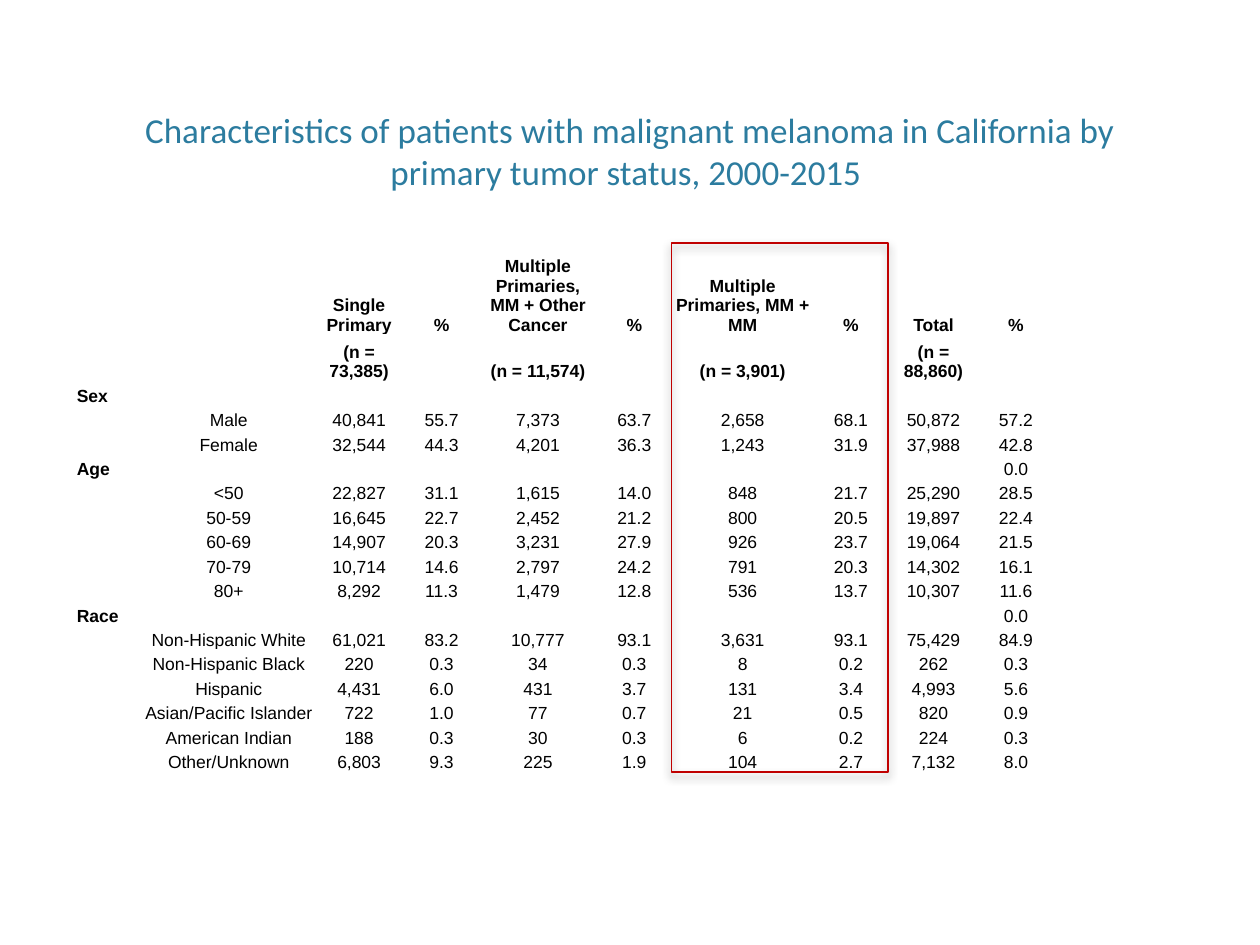
from dataclasses import dataclass
from lxml.etree import SubElement
from pptx import Presentation
from pptx.dml.color import RGBColor
from pptx.enum.shapes import MSO_SHAPE
from pptx.enum.text import MSO_ANCHOR, PP_ALIGN
from pptx.oxml.ns import qn
from pptx.util import Inches, Pt

TITLE = ("Characteristics of patients with malignant melanoma in California by "
         "primary tumor status, 2000-2015 ")
HEADERS = [
    ("", "", "Single Primary", "%", "Multiple Primaries, MM + Other Cancer", "%",
     "Multiple Primaries, MM + MM", "%", "Total", "%"),
    ("", "", "(n = 73,385)", "", "(n = 11,574)", "", "(n = 3,901)", "", "(n = 88,860)", ""),
]
# Group name, whether it spans two columns, its last cell, and its patient rows
GROUPS = [
    ("Sex", True, "", [
        ("Male", "40,841", "55.7", "7,373", "63.7", "2,658", "68.1", "50,872", "57.2"),
        ("Female", "32,544", "44.3", "4,201", "36.3", "1,243", "31.9", "37,988", "42.8"),
    ]),
    ("Age", False, "0.0", [
        ("<50", "22,827", "31.1", "1,615", "14.0", "848", "21.7", "25,290", "28.5"),
        ("50-59", "16,645", "22.7", "2,452", "21.2", "800", "20.5", "19,897", "22.4"),
        ("60-69", "14,907", "20.3", "3,231", "27.9", "926", "23.7", "19,064", "21.5"),
        ("70-79", "10,714", "14.6", "2,797", "24.2", "791", "20.3", "14,302", "16.1"),
        ("80+", "8,292", "11.3", "1,479", "12.8", "536", "13.7", "10,307", "11.6"),
    ]),
    ("Race", True, "0.0", [
        ("Non-Hispanic White", "61,021", "83.2", "10,777", "93.1", "3,631", "93.1",
         "75,429", "84.9"),
        ("Non-Hispanic Black", "220", "0.3", "34", "0.3", "8", "0.2", "262", "0.3"),
        ("Hispanic", "4,431", "6.0", "431", "3.7", "131", "3.4", "4,993", "5.6"),
        ("Asian/Pacific Islander", "722", "1.0", "77", "0.7", "21", "0.5", "820", "0.9"),
        ("American Indian", "188", "0.3", "30", "0.3", "6", "0.2", "224", "0.3"),
        ("Other/Unknown", "6,803", "9.3", "225", "1.9", "104", "2.7", "7,132", "8.0"),
    ]),
]


@dataclass(frozen=True)
class Theme:
    title_font: str = "Calibri"
    title_size: int = 20
    title_color: str = "2C7C9F"
    table_font: str = "Arial"
    table_size: int = 10
    table_color: str = "000000"
    frame_color: str = "C00000"
    shadow_color: str = "000000"


THEME = Theme()
PAGE_WIDTH, PAGE_HEIGHT = 10, 7.5
MARGIN = 0.06 * PAGE_WIDTH
TABLE_TOP, TABLE_HEIGHT = 1.93, 4.2
COLUMNS = [0.54, 1.35, 0.72, 0.59, 0.94, 0.59, 1.13, 0.59, 0.72, 0.59]
HEADER_ROWS = [0.73, 0.37]
FRAMED = (6, 8)  # first framed column, and the one after the last


def style_paragraph(para, font, size, color, bold=False, align=PP_ALIGN.CENTER):
    para.alignment = align
    para.font.name, para.font.size, para.font.bold = font, Pt(size), bold
    para.font.color.rgb = RGBColor.from_string(color)


def add_title(page):
    box = page.shapes.add_textbox(Inches(MARGIN), Inches(0.12),
                                  Inches(PAGE_WIDTH - 2 * MARGIN), Inches(1.46))
    frame = box.text_frame
    frame.word_wrap = True
    frame.vertical_anchor = MSO_ANCHOR.BOTTOM
    frame.text = TITLE
    style_paragraph(frame.paragraphs[0], THEME.title_font, THEME.title_size,
                    THEME.title_color)


def fill_cell(cell, text, bold, align):
    cell.fill.background()
    cell.vertical_anchor = MSO_ANCHOR.BOTTOM
    cell.margin_left = cell.margin_right = cell.margin_top = Inches(0.01)
    cell.margin_bottom = 0
    cell.text = text
    para = cell.text_frame.paragraphs[0]
    style_paragraph(para, THEME.table_font, THEME.table_size, THEME.table_color, bold, align)
    if not text:  # an empty cell takes its line height from the end mark
        SubElement(para._p, qn("a:endParaRPr"), sz=str(THEME.table_size * 100))


def table_rows():
    """Yield (cell texts, bold, spans two columns) for each row."""
    for texts in HEADERS:
        yield texts, True, False
    for name, spans, last, patients in GROUPS:
        yield (name, *[""] * (len(COLUMNS) - 2), last), False, spans
        for texts in patients:
            yield ("", *texts), False, False


def add_patient_table(page):
    rows = list(table_rows())
    body_height = (TABLE_HEIGHT - sum(HEADER_ROWS)) / (len(rows) - len(HEADER_ROWS))
    heights = HEADER_ROWS + [body_height] * (len(rows) - len(HEADER_ROWS))
    table = page.shapes.add_table(len(rows), len(COLUMNS), Inches(MARGIN), Inches(TABLE_TOP),
                                  Inches(sum(COLUMNS)), Inches(TABLE_HEIGHT)).table
    table.first_row = table.horz_banding = False
    for column, width in zip(table.columns, COLUMNS):
        column.width = Inches(width)
    for r, (texts, bold, spans) in enumerate(rows):
        table.rows[r].height = Inches(heights[r])
        for c, text in enumerate(texts):
            align = PP_ALIGN.LEFT if c == 0 else PP_ALIGN.CENTER
            fill_cell(table.cell(r, c), text, bold or c == 0, align)
        if spans:
            table.cell(r, 0).merge(table.cell(r, 1))


def add_column_frame(page):
    first, end = FRAMED
    frame = page.shapes.add_shape(
        MSO_SHAPE.RECTANGLE, Inches(MARGIN + sum(COLUMNS[:first])), Inches(TABLE_TOP),
        Inches(sum(COLUMNS[first:end])), Inches(TABLE_HEIGHT))
    frame.fill.background()
    frame.line.color.rgb = RGBColor.from_string(THEME.frame_color)
    frame.line.width = Pt(1)
    frame.shadow.inherit = False
    effects = frame._element.spPr.find(qn("a:effectLst"))
    shadow = SubElement(effects, qn("a:outerShdw"), blurRad=str(Pt(5)), dist=str(Pt(2)),
                        dir=str(90 * 60000), rotWithShape="0")
    color = SubElement(shadow, qn("a:srgbClr"), val=THEME.shadow_color)
    SubElement(color, qn("a:alpha"), val="40000")


def main():
    deck = Presentation()
    deck.slide_width, deck.slide_height = Inches(PAGE_WIDTH), Inches(PAGE_HEIGHT)
    page = deck.slides.add_slide(deck.slide_layouts[6])
    add_title(page)
    add_patient_table(page)
    add_column_frame(page)
    deck.save("out.pptx")


if __name__ == "__main__":
    main()
